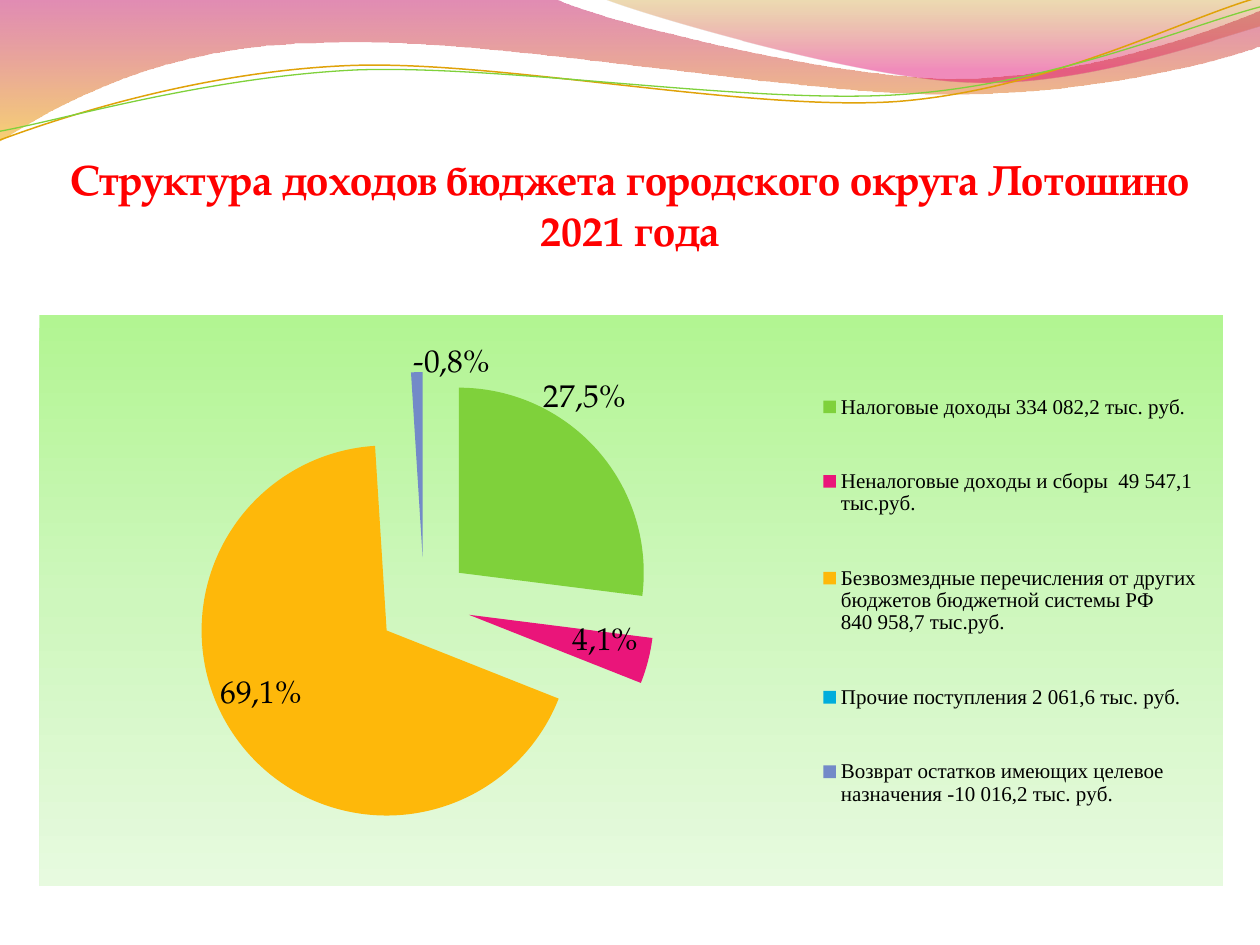
from dataclasses import dataclass
from math import cos, radians, sin

from lxml.etree import SubElement
from pptx import Presentation
from pptx.chart.data import CategoryChartData
from pptx.dml.color import RGBColor
from pptx.enum.chart import XL_CHART_TYPE, XL_LABEL_POSITION, XL_LEGEND_POSITION
from pptx.enum.text import MSO_ANCHOR, PP_ALIGN
from pptx.oxml.ns import qn
from pptx.util import Pt


@dataclass(frozen=True)
class Theme:
    head: str = "FF0000"
    ink: str = "000000"
    gold: str = "E0A209"
    lime: str = "7FD13B"
    rose: tuple = ((0, "BD0059", 45), (100, "F0AB00", 55))
    sand: tuple = ((0, "C38B00", 30), (80, "E1006B", 45))
    mint: tuple = ((0, "B2F592", 100), (50, "CEF7BD", 100), (100, "E7FADF", 100))
    font: str = "TeX Gyre Pagella"
    serif: str = "Times New Roman"
    title: int = 24
    label: int = 18
    legend: int = 12


THEME = Theme()
TILT = -2.7

# Bands run straight from the first point to the second, then in cubic curves
# (two controls and an end), and close with straight lines.
ROSE = ([(0, -0.7), (317, -0.7)],
        [(343, 12, 478, 45, 546, 45), (614, 45, 690, 19, 720, 6)],
        [(720.7, 26)],
        [(708, 32, 626, 55, 537, 54), (448, 54, 275, 20, 185, 24.5),
         (93, 25, 33, 60, -0.7, 81)])
SAND = ([(345, -0.7)], [(366, 8, 491, 45, 554, 47), (616, 50, 692, 23, 720, 15)],
        [(720, 0)], [])
GOLD = ([(0, 80)], [(35, 67, 114, 41, 199, 37.5), (284, 34, 427, 64, 513, 58),
                    (600, 51, 675, 11, 719, -1.4)], [], [])
LIME = ([(0, 75)], [(34, 69, 118, 44, 204, 40), (290, 37, 430, 60, 516, 54),
                    (602, 48, 678, 15, 720, 4)], [], [])

# Category, value, colour, label text, label shift as a share of the chart.
PARTS = [
    ("Налоговые доходы 334 082,2 тыс. руб.", 27, "7FD13B", "27,5%", (-0.05, -0.05)),
    ("Неналоговые доходы и сборы  49 547,1 тыс.руб.", 4, "EA157A", "4,1%", (-0.07, -0.06)),
    ("Безвозмездные перечисления от других бюджетов бюджетной системы РФ\n840 958,7 тыс.руб.",
     68, "FEB80A", "69,1%", (0.06, -0.11)),
    ("Прочие поступления 2 061,6 тыс. руб.", 0, "00ADDC", "0,1%", (-0.04, 0.05)),
    ("Возврат остатков имеющих целевое назначения -10 016,2 тыс. руб.",
     -1, "738AC8", "-0,8%", (0.03, 0.03)),
]


def rgb(code):
    return RGBColor.from_string(code)


def style(font, name, size, color, bold=False):
    font.name, font.size, font.bold = name, Pt(size), bold
    font.color.rgb = rgb(color)


def shade(parent, stops):
    """Add a top-down gradient with stops of position, colour and opacity."""
    grad = SubElement(parent, qn("a:gradFill"), rotWithShape="1")
    row = SubElement(grad, qn("a:gsLst"))
    for pos, code, alpha in stops:
        stop = SubElement(row, qn("a:gs"), pos=str(pos * 1000))
        color = SubElement(stop, qn("a:srgbClr"), val=code)
        if alpha < 100:
            SubElement(color, qn("a:alpha"), val=str(alpha * 1000))
    SubElement(grad, qn("a:lin"), ang="5400000", scaled="0")
    return grad


def turn(point, pivot, angle):
    c, s = cos(radians(angle)), sin(radians(angle))
    x, y = point[0] - pivot[0], point[1] - pivot[1]
    return pivot[0] + x * c - y * s, pivot[1] + x * s + y * c


def draw(slide, wave, close, tilt=0):
    """Build a freeform and join each curve's three points into a cubic."""
    pts, heads = [], []
    for i, group in enumerate(wave):
        for item in group:
            if i % 2:
                heads.append(len(pts))
            pts += zip(item[::2], item[1::2])
    pts = [turn(p, (360, 42), -tilt) for p in pts]
    pts = [(Pt(x), Pt(y)) for x, y in pts]
    build = slide.shapes.build_freeform(*pts[0])
    build.add_line_segments(pts[1:], close=close)
    shape = build.convert_to_shape()
    shape.shadow.inherit = False
    shape.rotation = tilt % 360
    track = next(shape.element.iter(qn("a:path")))
    steps = list(track)
    for head in heads:
        curve = SubElement(track, qn("a:cubicBezTo"))
        steps[head].addprevious(curve)
        for step in steps[head:head + 3]:
            curve.append(step[0])
            track.remove(step)
    return shape


def add_band(slide, wave, stops):
    shape = draw(slide, wave, True)
    shape.line.fill.background()
    props = shape.element.spPr
    props.find(qn("a:custGeom")).addnext(shade(props, stops))


def add_curve(slide, wave, color, width):
    shape = draw(slide, wave, False, TILT)
    shape.fill.background()
    shape.line.color.rgb = rgb(color)
    shape.line.width = Pt(width)


def add_title(slide, text):
    frame = slide.shapes.add_textbox(Pt(36), Pt(55.5), Pt(648), Pt(90)).text_frame
    frame.word_wrap = True
    frame.vertical_anchor = MSO_ANCHOR.BOTTOM
    frame.margin_left = frame.margin_right = frame.margin_bottom = 0
    frame.margin_top = Pt(3.6)
    para = frame.paragraphs[0]
    para.alignment = PP_ALIGN.CENTER
    para.space_after = Pt(3)
    run = para.add_run()
    run.text = text
    style(run.font, THEME.font, THEME.title, THEME.head, True)


def place(parent, after, **vals):
    """Set a manual layout, right after the named child if there is one."""
    for old in parent.findall(qn("c:layout")):
        parent.remove(old)
    box = SubElement(parent, qn("c:layout"))
    man = SubElement(box, qn("c:manualLayout"))
    for key, val in vals.items():
        SubElement(man, qn("c:" + key), val=str(val))
    if after:
        parent.find(qn(after)).addnext(box)
    else:
        parent.insert(0, box)


def add_labels(series):
    for point, (_, _, color, text, _) in zip(series.points, PARTS):
        point.format.fill.solid()
        point.format.fill.fore_color.rgb = rgb(color)
        point.format.line.fill.background()
        label = point.data_label
        run = label.text_frame.paragraphs[0].add_run()
        run.text = text
        style(run.font, THEME.font, THEME.label, THEME.ink)
        label.position = XL_LABEL_POSITION.OUTSIDE_END
    labels = series.data_labels
    labels.show_percentage, labels.show_value = True, False
    labels.number_format = "0.0"
    labels.number_format_is_linked = False
    root = labels._element
    for old in root.findall(qn("c:showLeaderLines")):
        root.remove(old)
    SubElement(root, qn("c:showLeaderLines"), val="0")
    for node, part in zip(root.iter(qn("c:dLbl")), PARTS):
        place(node, "c:idx", x=part[4][0], y=part[4][1])


def add_pie(slide):
    data = CategoryChartData(number_format="0")
    data.categories = [part[0] for part in PARTS]
    data.add_series("Series 1", [part[1] for part in PARTS])
    chart = slide.shapes.add_chart(
        XL_CHART_TYPE.PIE, Pt(22.5), Pt(180), Pt(676.4), Pt(326.4), data).chart
    chart.has_title = False
    style(chart.font, THEME.font, THEME.label, THEME.ink)
    chart.plots[0].vary_by_categories = True
    series = chart.plots[0].series[0]
    add_labels(series)
    root = series._element
    root.find(qn("c:dPt")).addprevious(SubElement(root, qn("c:explosion"), val="25"))

    chart.has_legend = True
    legend = chart.legend
    legend.position = XL_LEGEND_POSITION.RIGHT
    legend.include_in_layout = False
    style(legend.font, THEME.serif, THEME.legend, THEME.ink)
    place(legend._element, "c:legendPos", xMode="edge", yMode="edge",
          x=0.65, y=0.05, w=0.34, h=0.9)

    space = chart._chartSpace
    body = space.find(qn("c:chart"))
    place(body.find(qn("c:plotArea")), None, layoutTarget="inner",
          xMode="edge", yMode="edge", x=0.06, y=0.1, w=0.53, h=0.81)
    props = SubElement(space, qn("c:spPr"))
    shade(props, THEME.mint)
    SubElement(SubElement(props, qn("a:ln")), qn("a:noFill"))
    body.addnext(props)


def main():
    deck = Presentation()
    deck.slide_width, deck.slide_height = Pt(720), Pt(540)
    slide = deck.slides.add_slide(deck.slide_layouts[6])
    add_band(slide, ROSE, THEME.rose)
    add_band(slide, SAND, THEME.sand)
    add_curve(slide, GOLD, THEME.gold, 0.85)
    add_curve(slide, LIME, THEME.lime, 0.75)
    add_title(slide, "Структура доходов бюджета городского округа Лотошино 2021 года")
    add_pie(slide)
    deck.save("out.pptx")


if __name__ == "__main__":
    main()
